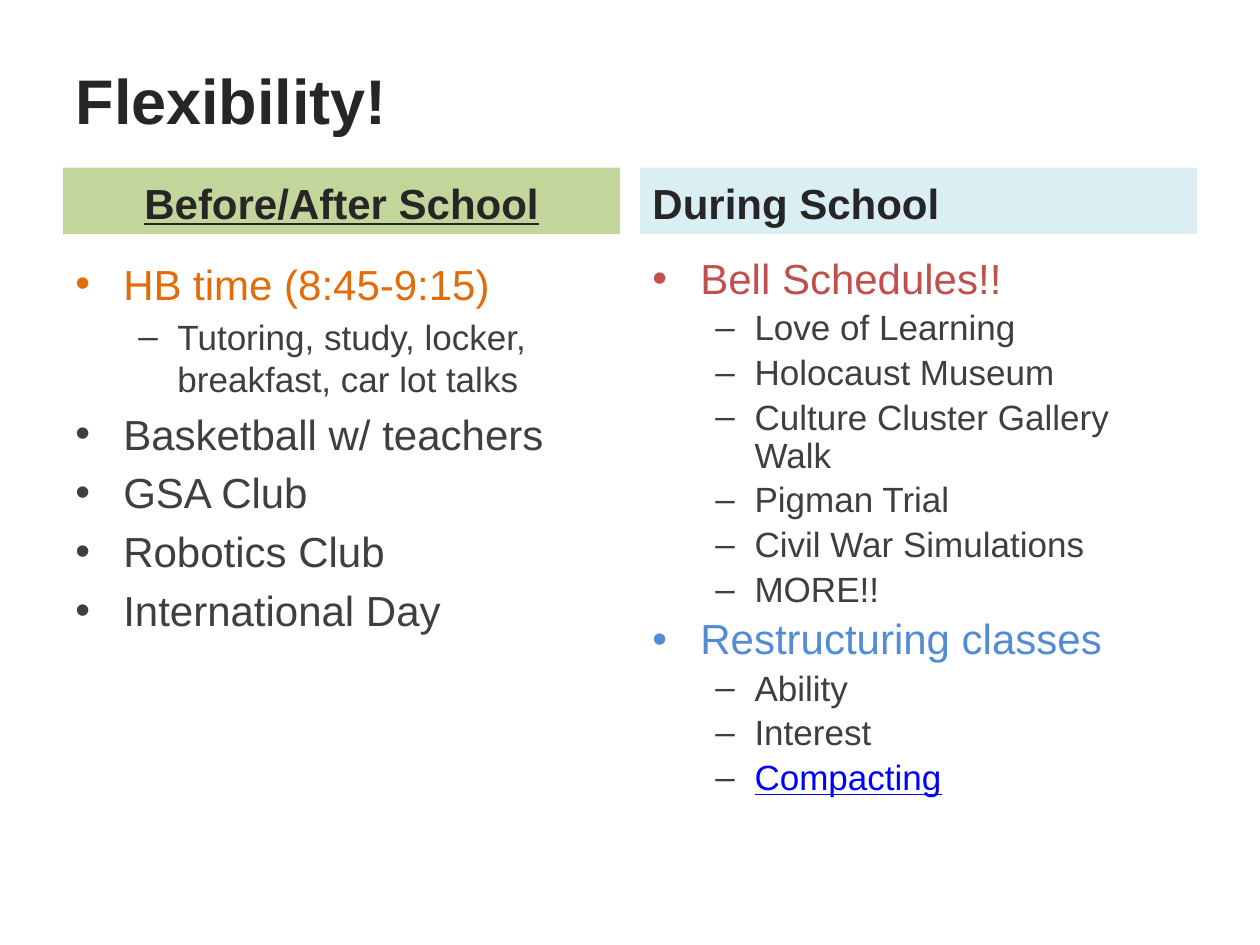
from lxml import etree
from pptx import Presentation, util as u
from pptx.dml.color import RGBColor
from pptx.enum import shapes, text
from pptx.oxml import ns

COLORS = {
    "heading": "262626", "body": "3F3F3F", "green": "C2D59B", "pale blue": "DAEEF3",
    "orange": "E36C09", "red": "C0504D", "blue": "538CD5", "link": "0000FF",
}
FONT = "Arial"
MARGIN, GUTTER = 0.5, 0.16
SLIDE_WIDTH, SLIDE_HEIGHT = 10, 7.5
COLUMN_WIDTH = (SLIDE_WIDTH - 2 * MARGIN - GUTTER) / 2
HEADER_TOP, HEADER_HEIGHT, LIST_TOP = 1.33, 0.53, 2

# Per outline level: bullet, text size, left margin, hanging indent, space before
LEVELS = [
    {"bullet": "•", "size": 24, "margin": 0.38, "hang": 0.38, "before": 4.8},
    {"bullet": "–", "size": 20, "margin": 0.81, "hang": 0.31, "before": 4},
]

# Each item: level, wording, colour
BEFORE_AFTER = [
    (0, "HB time (8:45-9:15)", "orange"),
    (1, "Tutoring, study, locker, breakfast, car lot talks", "body"),
    *[(0, activity, "body") for activity in
      ("Basketball w/ teachers", "GSA Club", "Robotics Club", "International Day")],
]
DURING = [
    (0, "Bell Schedules!!", "red"),
    *[(1, event, "body") for event in
      ("Love of Learning", "Holocaust Museum", "Culture Cluster Gallery Walk",
       "Pigman Trial", "Civil War Simulations", "MORE!!")],
    (0, "Restructuring classes", "blue"),
    (1, "Ability", "body"),
    (1, "Interest", "body"),
    (1, "Compacting", "link"),
]
COLUMNS = [
    {"heading": "Before/After School", "fill": "green", "align": text.PP_ALIGN.CENTER,
     "underline": True, "items": BEFORE_AFTER, "height": 4.15, "spacing": 1.0},
    {"heading": "During School", "fill": "pale blue", "align": text.PP_ALIGN.LEFT,
     "underline": False, "items": DURING, "height": 5.2, "spacing": 0.9},
]


def rgb(name):
    return RGBColor.from_string(COLORS[name])


def set_font(font, color, **values):
    for name, value in {"name": FONT, **values}.items():
        setattr(font, name, value)
    font.color.rgb = rgb(color)


def set_frame(frame, anchor):
    values = {
        "word_wrap": True, "auto_size": text.MSO_AUTO_SIZE.NONE, "vertical_anchor": anchor,
        "margin_left": u.Inches(0.1), "margin_right": u.Inches(0.1),
        "margin_top": u.Inches(0.05), "margin_bottom": u.Inches(0.05),
    }
    for name, value in values.items():
        setattr(frame, name, value)


def add_bullet(paragraph, level, color):
    properties = paragraph._p.get_or_add_pPr()
    properties.set("marL", str(u.Inches(level["margin"])))
    properties.set("indent", str(-u.Inches(level["hang"])))
    bullet_color = etree.SubElement(properties, ns.qn("a:buClr"))
    etree.SubElement(bullet_color, ns.qn("a:srgbClr"), val=COLORS[color])
    etree.SubElement(properties, ns.qn("a:buFont"), typeface=FONT)
    etree.SubElement(properties, ns.qn("a:buChar"), char=level["bullet"])


def place_title(slide, left, top, width, height):
    title = slide.shapes.title
    title.left, title.top, title.width, title.height = map(u.Inches, (left, top, width, height))
    set_frame(title.text_frame, text.MSO_ANCHOR.MIDDLE)
    title.text_frame.text = "Flexibility!"
    paragraph = title.text_frame.paragraphs[0]
    paragraph.alignment = text.PP_ALIGN.LEFT
    set_font(paragraph.runs[0].font, "heading", size=u.Pt(36), bold=True)


def place_header(slide, column, left, top, width, height):
    header = slide.shapes.add_shape(
        shapes.MSO_SHAPE.RECTANGLE, *map(u.Inches, (left, top, width, height)))
    header.shadow.inherit = False
    header.fill.solid()
    header.fill.fore_color.rgb = rgb(column["fill"])
    header.line.fill.background()
    set_frame(header.text_frame, text.MSO_ANCHOR.BOTTOM)
    header.text_frame.text = column["heading"]
    paragraph = header.text_frame.paragraphs[0]
    paragraph.alignment = column["align"]
    set_font(paragraph.runs[0].font, "heading", size=u.Pt(24), bold=True,
             underline=column["underline"])


def place_list(slide, column, left, top, width, height):
    outline = slide.shapes.add_textbox(*map(u.Inches, (left, top, width, height)))
    frame = outline.text_frame
    set_frame(frame, text.MSO_ANCHOR.TOP)
    for index, (depth, wording, color) in enumerate(column["items"]):
        level = LEVELS[depth]
        paragraph = frame.add_paragraph() if index else frame.paragraphs[0]
        is_link = color == "link"
        add_bullet(paragraph, level, "body" if is_link else color)
        paragraph.level = depth
        paragraph.line_spacing = column["spacing"]
        paragraph.space_before = u.Pt(level["before"] if index else 0)
        run = paragraph.add_run()
        run.text = wording
        set_font(run.font, color, size=u.Pt(level["size"]), underline=is_link)


def place_column(slide, column, left):
    place_header(slide, column, left, HEADER_TOP, COLUMN_WIDTH, HEADER_HEIGHT)
    place_list(slide, column, left, LIST_TOP, COLUMN_WIDTH, column["height"])


def main():
    deck = Presentation()
    deck.slide_width, deck.slide_height = u.Inches(SLIDE_WIDTH), u.Inches(SLIDE_HEIGHT)
    slide = deck.slides.add_slide(deck.slide_layouts.get_by_name("Title Only"))
    place_title(slide, MARGIN, 0.16, SLIDE_WIDTH - 2 * MARGIN, 1.25)
    for index, column in enumerate(COLUMNS):
        place_column(slide, column, MARGIN + index * (COLUMN_WIDTH + GUTTER))
    deck.save("out.pptx")


if __name__ == "__main__":
    main()
